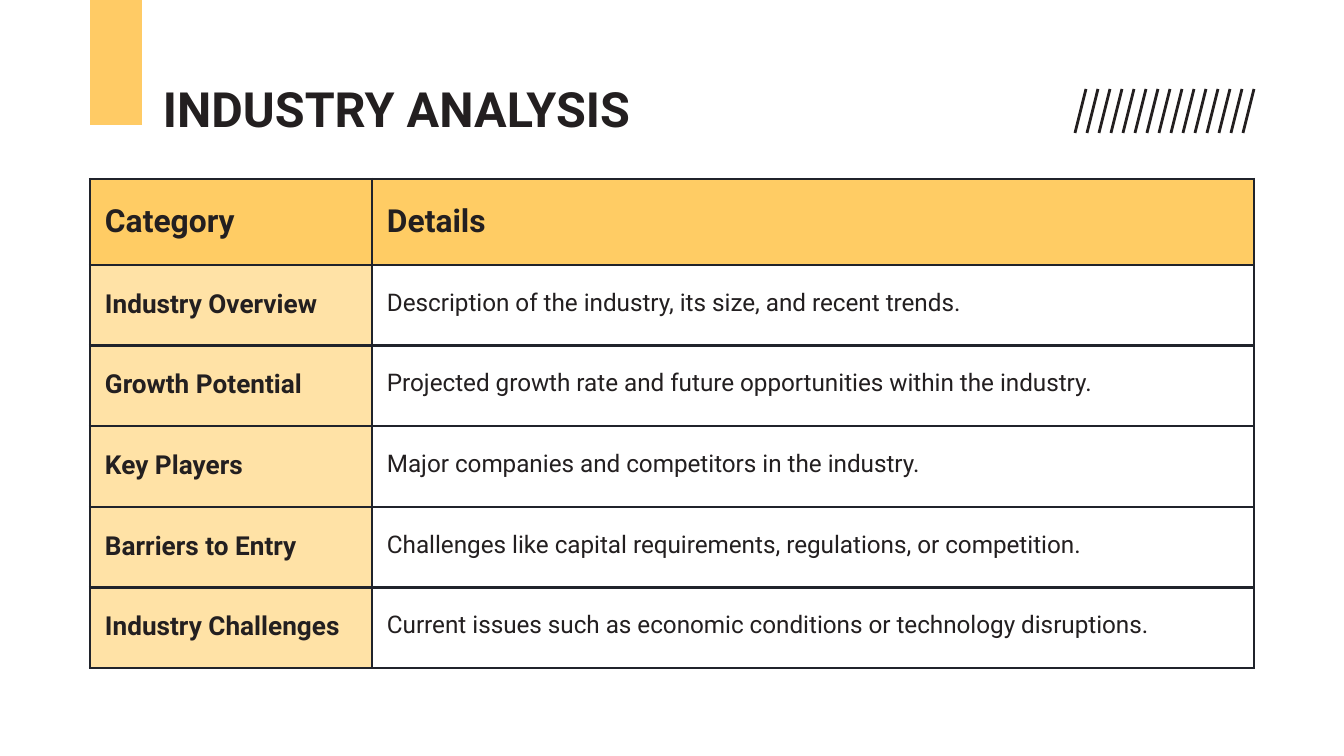
from lxml import etree
from pptx import Presentation
from pptx import util as u
from pptx.dml.color import RGBColor
from pptx.enum import shapes, text
from pptx.oxml.ns import qn

# Content
TITLE = "INDUSTRY ANALYSIS"
ROWS = [
    ("Category", "Details"),
    ("Industry Overview", "Description of the industry, its size, and recent trends."),
    ("Growth Potential", "Projected growth rate and future opportunities within the industry."),
    ("Key Players", "Major companies and competitors in the industry."),
    ("Barriers to Entry", "Challenges like capital requirements, regulations, or competition."),
    ("Industry Challenges", "Current issues such as economic conditions or technology disruptions."),
]

# Style
FONT = "Roboto"
INK = RGBColor(0x23, 0x1F, 0x20)
EDGE = RGBColor(0x20, 0x23, 0x2B)
GOLD = RGBColor(0xFF, 0xCB, 0x65)
HEAD = RGBColor(0xFF, 0xCC, 0x64)
PALE = RGBColor(0xFF, 0xE2, 0xA6)
LINE = u.Pt(1.5)

# Layout in px
LEFT, TOP = 90, 179
COLS = (282, 882)
HEAD_H, BODY_H = 86, 403
PAD_X, PAD_Y = 15, 24
SLASHES, STEP, LEAN = 15, 12, 11
SLASH_X, SLASH_TOP, SLASH_END = 1086, 89, 133


def px(n):
    return round(n * 914400 / 134.4)


def style(para, size, bold):
    for run in para.runs:
        font = run.font
        font.name, font.size, font.bold = FONT, u.Pt(size), bold
        font.color.rgb = INK


def border(cell):
    props = cell._tc.get_or_add_tcPr()
    for side in ("a:lnL", "a:lnR", "a:lnT", "a:lnB"):
        line = etree.SubElement(props, qn(side), w=str(LINE))
        fill = etree.SubElement(line, qn("a:solidFill"))
        etree.SubElement(fill, qn("a:srgbClr"), val=str(EDGE))


def add_title(slide):
    bar = slide.shapes.add_shape(
        shapes.MSO_SHAPE.RECTANGLE, px(LEFT), 0, px(52), px(125))
    bar.shadow.inherit = False
    bar.fill.solid()
    bar.fill.fore_color.rgb = GOLD
    bar.line.fill.background()

    box = slide.shapes.add_textbox(px(163), px(79), px(587), px(59))
    frame = box.text_frame
    frame.word_wrap = True
    frame.margin_left = frame.margin_right = 0
    frame.margin_top = frame.margin_bottom = 0
    frame.text = TITLE
    style(frame.paragraphs[0], 26, True)


def add_slashes(slide):
    for i in range(SLASHES):
        x = SLASH_X + i * STEP
        line = slide.shapes.add_connector(
            shapes.MSO_CONNECTOR.STRAIGHT,
            px(x), px(SLASH_TOP), px(x - LEAN), px(SLASH_END))
        line.line.color.rgb = INK
        line.line.width = LINE
        etree.SubElement(line._element.spPr, qn("a:effectLst"))


def add_grid(slide):
    table = slide.shapes.add_table(
        len(ROWS), len(COLS), px(LEFT), px(TOP),
        px(sum(COLS)), px(HEAD_H + BODY_H)).table
    for col, width in zip(table.columns, COLS):
        col.width = px(width)
    for r, row in enumerate(ROWS):
        table.rows[r].height = px(BODY_H / (len(ROWS) - 1) if r else HEAD_H)
        for c, words in enumerate(row):
            cell = table.cell(r, c)
            border(cell)
            if r and c:
                cell.fill.background()
            else:
                cell.fill.solid()
                cell.fill.fore_color.rgb = PALE if r else HEAD
            cell.margin_left = cell.margin_right = px(PAD_X)
            cell.margin_top, cell.margin_bottom = px(PAD_Y), 0
            cell.vertical_anchor = text.MSO_ANCHOR.TOP
            cell.text_frame.text = words
            size = 17 if r == 0 else (14, 13)[c]
            style(cell.text_frame.paragraphs[0], size, not (r and c))


def main():
    deck = Presentation()
    deck.slide_width, deck.slide_height = px(1344), px(756)
    slide = deck.slides.add_slide(deck.slide_layouts[6])
    add_title(slide)
    add_slashes(slide)
    add_grid(slide)
    deck.save("out.pptx")


if __name__ == "__main__":
    main()
